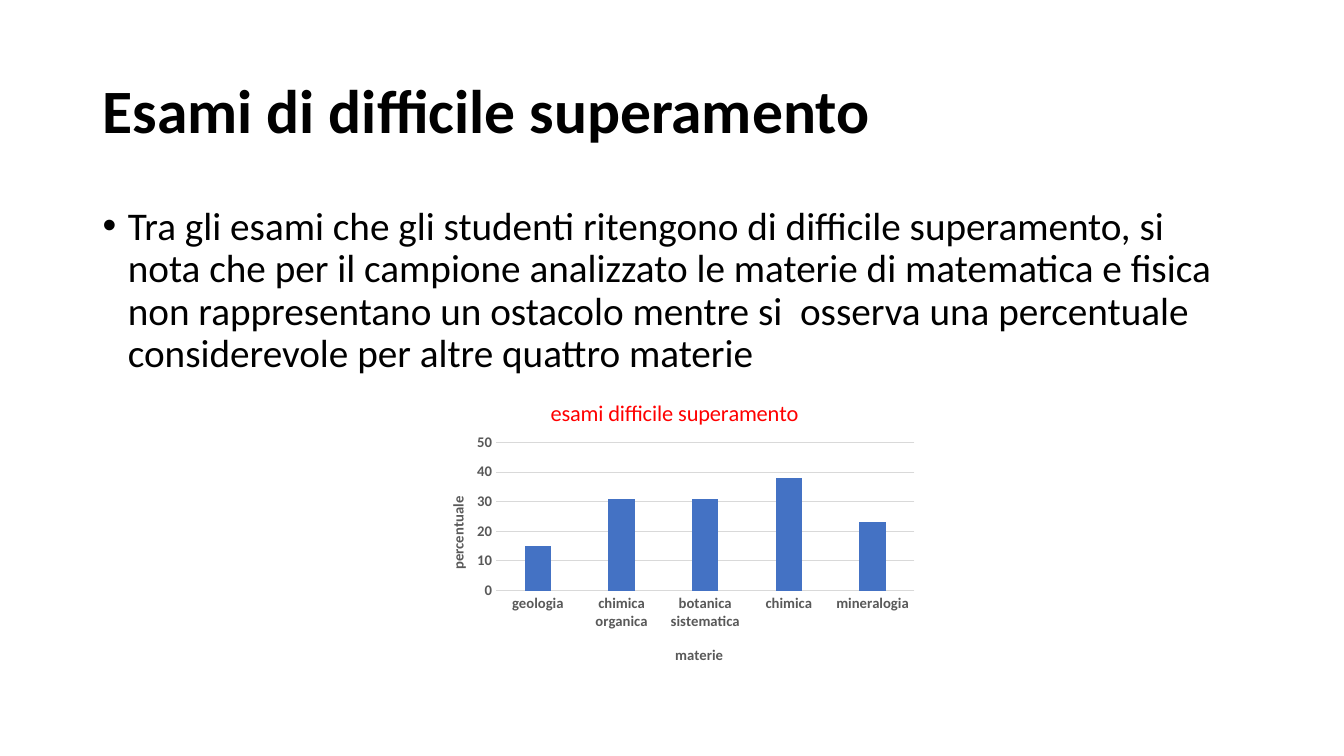
import pptx
import pptx.util
import pptx.chart.data
import pptx.dml.color
import pptx.enum.chart
import pptx.enum.text
import pptx.oxml
import pptx.oxml.ns

Inches = pptx.util.Inches
Pt = pptx.util.Pt
qn = pptx.oxml.ns.qn
GREY = "595959"
RULE = "D9D9D9"


def paint(color):
    return pptx.dml.color.RGBColor.from_string(color)


def style(font, size, color="000000", bold=False):
    font.name = "Calibri"
    font.size = Pt(size)
    font.bold = bold
    font.color.rgb = paint(color)


def write(frame, text, size, color="000000", bold=False, line=None, before=None):
    para = frame.paragraphs[0]
    run = para.add_run()
    run.text = text
    style(run.font, size, color, bold)
    if line:
        para.line_spacing = line
    if before:
        para.space_before = Pt(before)
    return para


def place(parent, spot, inner=False):
    for old in parent.findall(qn("c:layout")):
        parent.remove(old)
    target = '<c:layoutTarget val="inner"/>' if inner else ""
    modes = "".join(f'<c:{key}Mode val="edge"/>' for key in "xy")
    sizes = "".join(f'<c:{key} val="{val}"/>' for key, val in zip("xywh", spot))
    layout = pptx.oxml.parse_xml(
        f'<c:layout {pptx.oxml.ns.nsdecls("c")}><c:manualLayout>'
        f"{target}{modes}{sizes}</c:manualLayout></c:layout>")
    parent.insert(0 if inner else 1, layout)


def add_title(slide, box):
    title = slide.shapes.title
    title.left, title.top, title.width, title.height = map(Inches, box)
    frame = title.text_frame
    frame.word_wrap = True
    frame.vertical_anchor = pptx.enum.text.MSO_ANCHOR.MIDDLE
    para = write(frame, "Esami di difficile superamento", 44, bold=True, line=0.9)
    para.alignment = pptx.enum.text.PP_ALIGN.LEFT


def add_body(slide, box):
    frame = slide.shapes.add_textbox(*map(Inches, box)).text_frame
    frame.word_wrap = True
    para = write(
        frame,
        "Tra gli esami che gli studenti ritengono di difficile superamento, si nota che "
        "per il campione analizzato le materie di matematica e fisica non rappresentano "
        "un ostacolo mentre si  osserva una percentuale considerevole per altre quattro materie",
        28, line=0.9, before=10)
    props = para._p.get_or_add_pPr()
    props.set("marL", str(Inches(0.25)))
    props.set("indent", str(-Inches(0.25)))
    for tag, name, value in (("buFont", "typeface", "Arial"), ("buChar", "char", "•")):
        mark = pptx.oxml.parse_xml(
            f'<a:{tag} {pptx.oxml.ns.nsdecls("a")} {name}="{value}"/>')
        props.append(mark)


def set_axis(axis, text, spot):
    axis.major_tick_mark = pptx.enum.chart.XL_TICK_MARK.NONE
    axis.minor_tick_mark = pptx.enum.chart.XL_TICK_MARK.NONE
    style(axis.tick_labels.font, 10.5, GREY, True)
    write(axis.axis_title.text_frame, text, 10.5, GREY, True)
    place(axis.axis_title._element, spot)


def set_line(line):
    line.color.rgb = paint(RULE)
    line.width = Pt(0.75)


def add_chart(slide, box):
    data = pptx.chart.data.CategoryChartData()
    data.categories = ["geologia", "chimica organica", "botanica\nsistematica",
                       "chimica", "mineralogia"]
    data.add_series("Series 1", (15, 31, 31, 38, 23))
    kind = pptx.enum.chart.XL_CHART_TYPE.COLUMN_CLUSTERED
    chart = slide.shapes.add_chart(kind, *map(Inches, box), data).chart
    style(chart.font, 10)
    chart.has_legend = False
    write(chart.chart_title.text_frame, "esami difficile superamento", 16, "FF0000")
    chart.chart_title.include_in_layout = False
    place(chart.chart_title._element, (0.25, 0.05))

    plot = chart.plots[0]
    plot.vary_by_categories = False
    plot.gap_width = 219
    plot.overlap = -27
    fill = plot.series[0].format.fill
    fill.solid()
    fill.fore_color.rgb = paint("4472C4")

    cats, vals = chart.category_axis, chart.value_axis
    set_axis(cats, "materie", (0.5, 0.87))
    set_axis(vals, "percentuale", (0.05, 0.38))
    set_line(cats.format.line)
    set_line(vals.major_gridlines.format.line)
    vals.format.line.fill.background()
    vals.minimum_scale, vals.maximum_scale, vals.major_unit = 0, 50, 10
    vals.axis_title.text_frame._txBody.bodyPr.set("rot", "-5400000")
    place(chart._chartSpace.chart.plotArea, (0.15, 0.21, 0.83, 0.49), inner=True)


def main():
    deck = pptx.Presentation()
    deck.slide_width, deck.slide_height = Inches(13.33), Inches(7.5)
    slide = deck.slides.add_slide(deck.slide_layouts[5])
    add_title(slide, (0.92, 0.4, 11.5, 1.45))
    add_body(slide, (0.92, 2, 11.5, 4.76))
    add_chart(slide, (4.17, 3.76, 5, 3))
    deck.save("out.pptx")


if __name__ == "__main__":
    main()
